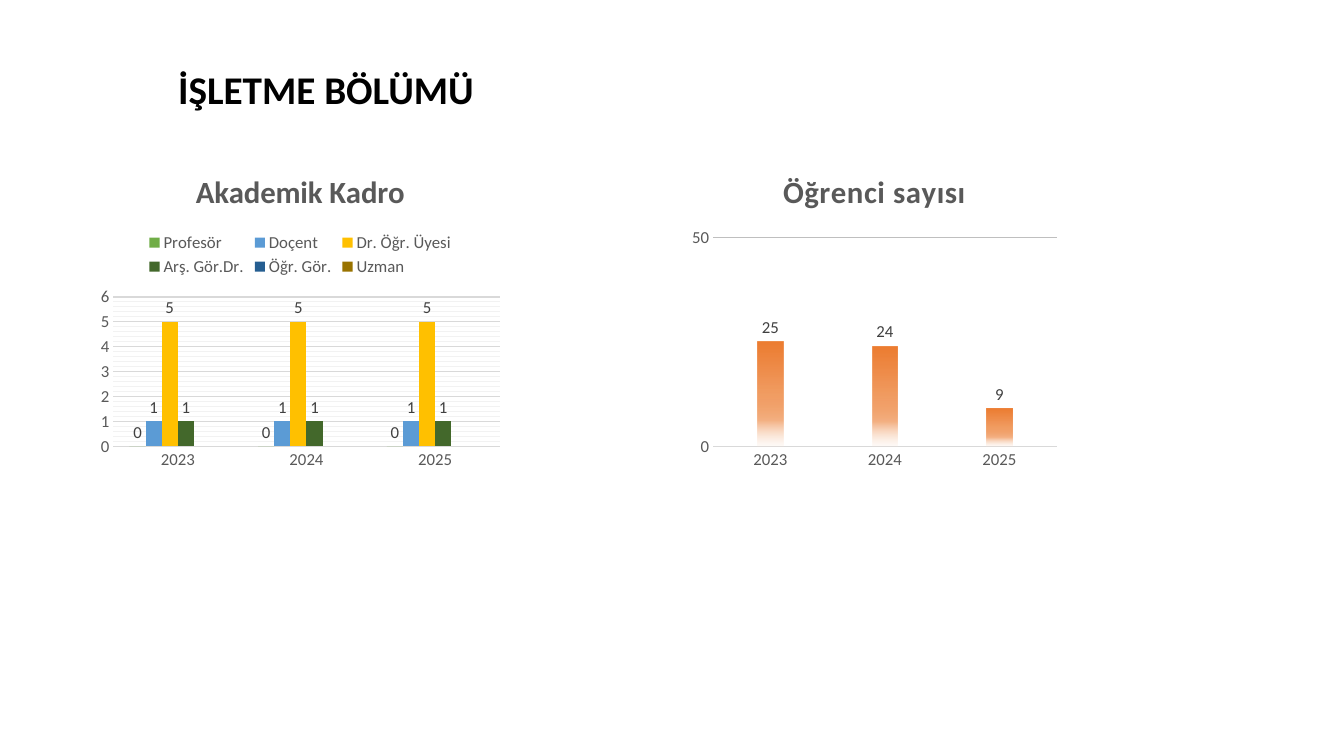
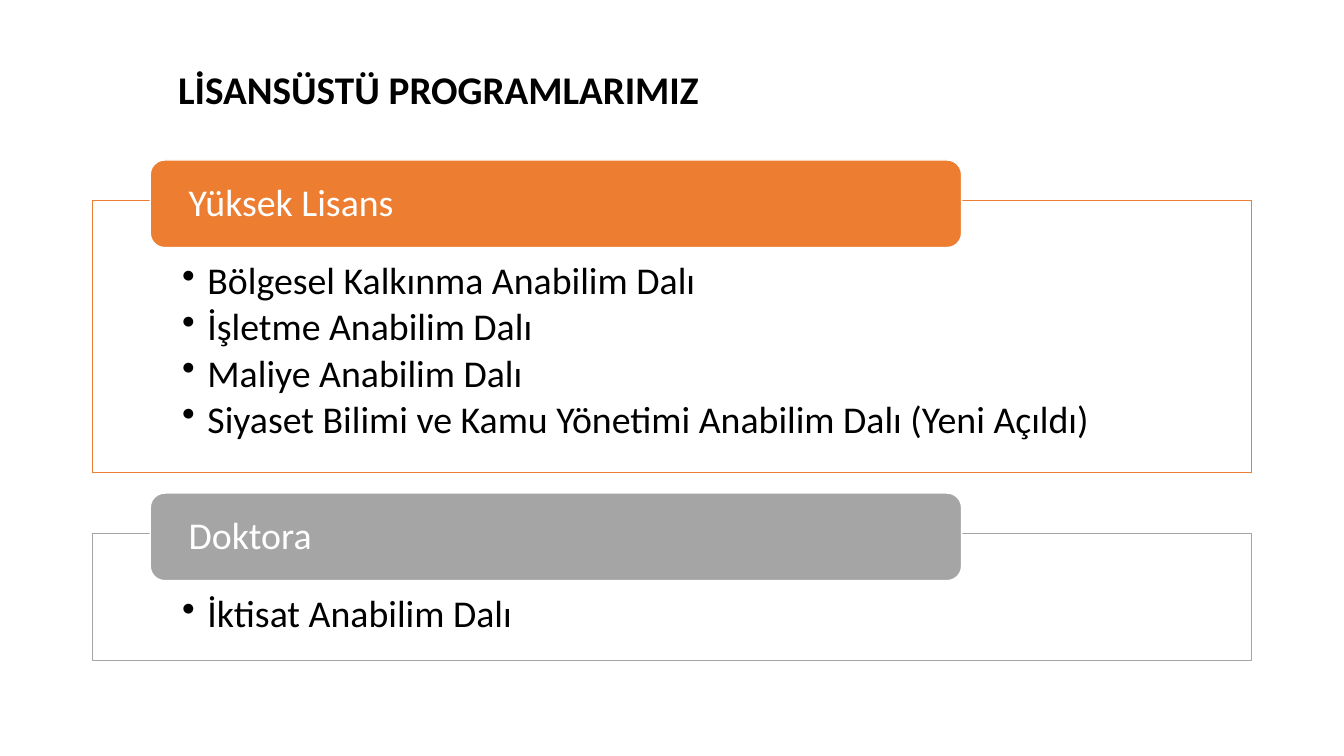
from dataclasses import dataclass

from lxml.etree import SubElement
from pptx import Presentation
from pptx.chart.data import CategoryChartData
from pptx.dml.color import RGBColor
from pptx.enum.chart import XL_CHART_TYPE, XL_LABEL_POSITION, XL_LEGEND_POSITION, XL_TICK_MARK
from pptx.enum.shapes import MSO_SHAPE
from pptx.enum.text import MSO_ANCHOR, PP_ALIGN
from pptx.oxml.ns import qn
from pptx.util import Pt


@dataclass(frozen=True)
class Theme:
    font: str = "Calibri"
    title_size: float = 28
    body_size: float = 27
    chart_title_size: float = 22
    chart_size: float = 12
    black: str = "000000"
    white: str = "FFFFFF"
    orange: str = "ED7D31"
    gray: str = "A5A5A5"
    chart_text: str = "595959"
    label_text: str = "404040"
    axis_line: str = "D9D9D9"
    minor_grid: str = "F2F2F2"
    scale_grid: str = "BFBFBF"
    staff: tuple = ("70AD47", "5B9BD5", "FFC000", "43682B", "255E91", "997300")
    # position %, colour, opacity %
    fade: tuple = ((0, "ED7D31", 100), (51, "ED7D31", 75), (75, "F4B183", 100), (100, "FBE5D6", 15))


theme = Theme()


def set_all(target, **values):
    for name, value in values.items():
        setattr(target, name, value)


def style_font(font, size, color, bold=False):
    set_all(font, name=theme.font, size=Pt(size), bold=bold)
    font.color.rgb = RGBColor.from_string(color)


presentation = Presentation()
set_all(presentation, slide_width=Pt(960), slide_height=Pt(540))

slides = []
for title in ("İŞLETME BÖLÜMÜ", "LİSANSÜSTÜ PROGRAMLARIMIZ"):
    slide = presentation.slides.add_slide(presentation.slide_layouts[6])
    title_box = slide.shapes.add_textbox(Pt(120.2), Pt(28.8), Pt(581.8), Pt(73.4))
    set_all(title_box.text_frame, word_wrap=True, vertical_anchor=MSO_ANCHOR.MIDDLE)
    paragraph = title_box.text_frame.paragraphs[0]
    set_all(paragraph, text=title, line_spacing=0.9)
    style_font(paragraph.runs[0].font, theme.title_size, theme.black, bold=True)
    slides.append(slide)
department_slide, programs_slide = slides

# Department charts
years = ("2023", "2024", "2025")
charts = (
    {"title": "Akademik Kadro", "spacing": 0, "left": 66.2, "width": 296.6,
     "series": (("Profesör", (0, 0, 0)), ("Doçent", (1, 1, 1)), ("Dr. Öğr. Üyesi", (5, 5, 5)),
                ("Arş. Gör.Dr.", (1, 1, 1)), ("Öğr. Gör.", (None,) * 3), ("Uzman", (None,) * 3)),
     "plot": {"gap_width": 199, "overlap": 0},
     "scale": {"minimum_scale": 0, "maximum_scale": 6, "major_unit": 1, "minor_unit": 0.2},
     "grid": theme.axis_line, "detailed": True},
    {"title": "Öğrenci sayısı", "spacing": 50, "left": 488.9, "width": 271.4,
     "series": (("Öğrenci sayısı", (25, 24, 9)),),
     "plot": {"gap_width": 355, "overlap": -70},
     "scale": {"minimum_scale": 0, "maximum_scale": 50, "major_unit": 50},
     "grid": theme.scale_grid, "detailed": False},
)
for details in charts:
    data = CategoryChartData()
    data.categories = years
    for name, values in details["series"]:
        data.add_series(name, values)
    chart = department_slide.shapes.add_chart(
        XL_CHART_TYPE.COLUMN_CLUSTERED, Pt(details["left"]), Pt(109.4),
        Pt(details["width"]), Pt(231.1), data).chart
    style_font(chart.font, theme.chart_size, theme.chart_text)

    chart.has_title = True
    paragraph = chart.chart_title.text_frame.paragraphs[0]
    run = paragraph.add_run()
    run.text = details["title"]
    style_font(run.font, theme.chart_title_size, theme.chart_text, bold=True)
    run.font._element.set("spc", str(details["spacing"]))

    chart.has_legend = details["detailed"]
    if chart.has_legend:
        set_all(chart.legend, position=XL_LEGEND_POSITION.TOP, include_in_layout=False)
        style_font(chart.legend.font, theme.chart_size, theme.chart_text)

    plot = chart.plots[0]
    set_all(plot, vary_by_categories=False, has_data_labels=True, **details["plot"])
    set_all(plot.data_labels, show_value=True, position=XL_LABEL_POSITION.OUTSIDE_END)
    style_font(plot.data_labels.font, theme.chart_size, theme.label_text)

    for axis in (chart.category_axis, chart.value_axis):
        set_all(axis, major_tick_mark=XL_TICK_MARK.NONE, minor_tick_mark=XL_TICK_MARK.NONE)
        style_font(axis.tick_labels.font, theme.chart_size, theme.chart_text)
    value_axis = chart.value_axis
    set_all(value_axis, has_major_gridlines=True, has_minor_gridlines=details["detailed"],
            **details["scale"])
    value_axis.format.line.fill.background()
    for line, color in ((chart.category_axis.format.line, theme.axis_line),
                        (value_axis.major_gridlines.format.line, details["grid"])):
        line.width = Pt(0.75)
        line.color.rgb = RGBColor.from_string(color)
    if details["detailed"]:
        gridlines = value_axis._element.find(qn("c:minorGridlines"))
        outline = SubElement(SubElement(gridlines, qn("c:spPr")), qn("a:ln"), w=str(int(Pt(0.75))))
        SubElement(SubElement(outline, qn("a:solidFill")), qn("a:srgbClr"), val=theme.minor_grid)

    for series, color in zip(plot.series, theme.staff):
        fill = series.format.fill
        if details["detailed"]:
            fill.solid()
            fill.fore_color.rgb = RGBColor.from_string(color)
            continue
        fill.gradient()
        fill.gradient_angle = 270
        stops = series._element.find(".//" + qn("a:gsLst"))
        for stop in list(stops):
            stops.remove(stop)
        for position, stop_color, opacity in theme.fade:
            stop = SubElement(stops, qn("a:gs"), pos=str(position * 1000))
            shade = SubElement(stop, qn("a:srgbClr"), val=stop_color)
            SubElement(shade, qn("a:alpha"), val=str(opacity * 1000))

# Graduate programs
programs = (
    ("Yüksek Lisans", theme.orange, 143.3, 194.4,
     ("Bölgesel Kalkınma Anabilim Dalı", "İşletme Anabilim Dalı", "Maliye Anabilim Dalı",
      "Siyaset Bilimi ve Kamu Yönetimi Anabilim Dalı (Yeni Açıldı)")),
    ("Doktora", theme.gray, 381.2, 90.7, ("İktisat Anabilim Dalı",)),
)
for degree, color, top, height, departments in programs:
    frame = programs_slide.shapes.add_shape(
        MSO_SHAPE.RECTANGLE, Pt(66.2), Pt(top), Pt(828), Pt(height))
    heading = programs_slide.shapes.add_shape(
        MSO_SHAPE.ROUNDED_RECTANGLE, Pt(107.3), Pt(top - 29), Pt(579.6), Pt(62.6))
    for shape, fill_color, line_color in ((frame, theme.white, color),
                                          (heading, color, theme.white)):
        shape.shadow.inherit = False
        shape.fill.solid()
        shape.fill.fore_color.rgb = RGBColor.from_string(fill_color)
        shape.line.color.rgb = RGBColor.from_string(line_color)
        shape.line.width = Pt(1)

    set_all(heading.text_frame, word_wrap=True, vertical_anchor=MSO_ANCHOR.MIDDLE,
            margin_left=Pt(24.5), margin_right=Pt(24.5), margin_top=0, margin_bottom=0)
    paragraph = heading.text_frame.paragraphs[0]
    set_all(paragraph, text=degree, alignment=PP_ALIGN.LEFT, line_spacing=0.9)
    style_font(paragraph.runs[0].font, theme.body_size, theme.white)

    set_all(frame.text_frame, word_wrap=True, vertical_anchor=MSO_ANCHOR.TOP,
            margin_left=Pt(64), margin_right=Pt(64), margin_top=Pt(44), margin_bottom=Pt(15))
    frame.text_frame.text = "\n".join(departments)
    for paragraph in frame.text_frame.paragraphs:
        set_all(paragraph, alignment=PP_ALIGN.LEFT, line_spacing=0.9, space_after=Pt(3.7))
        properties = paragraph._p.get_or_add_pPr()
        properties.set("marL", str(int(Pt(18))))
        properties.set("indent", str(-int(Pt(18))))
        SubElement(properties, qn("a:buChar"), char="•")
        style_font(paragraph.runs[0].font, theme.body_size, theme.black)

presentation.save("out.pptx")
